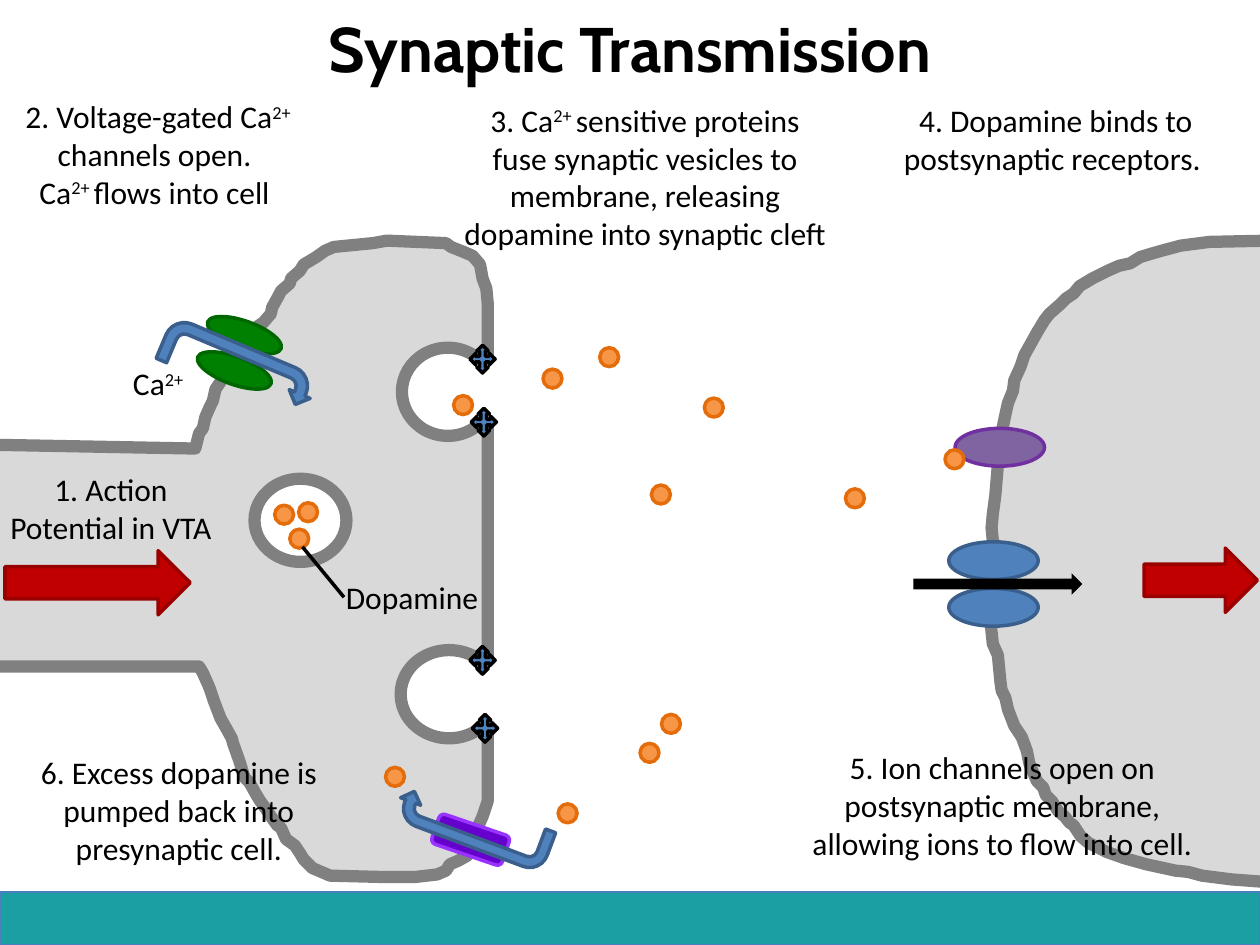
from pptx import Presentation
from pptx.dml.color import RGBColor
from pptx.enum.shapes import MSO_CONNECTOR, MSO_SHAPE as Shape
from pptx.enum.text import MSO_ANCHOR as Anchor, PP_ALIGN as Align
from pptx.oxml.xmlchemy import OxmlElement
from pptx.util import Inches, Pt

BLACK = RGBColor(0x00, 0x00, 0x00)
WHITE = RGBColor(0xFF, 0xFF, 0xFF)
TEAL = RGBColor(0x1C, 0x9F, 0xA3)
TEAL_EDGE = RGBColor(0x4B, 0x7E, 0xBC)
CELL = RGBColor(0xD9, 0xD9, 0xD9)
MEMBRANE = RGBColor(0x80, 0x80, 0x80)
GREEN = RGBColor(0x00, 0x80, 0x00)
GREEN_EDGE = RGBColor(0x00, 0x66, 0x00)
ORANGE = RGBColor(0xF7, 0x96, 0x46)
ORANGE_EDGE = RGBColor(0xE4, 0x6C, 0x0A)
RED = RGBColor(0xC0, 0x00, 0x00)
RED_EDGE = RGBColor(0x99, 0x00, 0x00)
BLUE = RGBColor(0x4F, 0x81, 0xBD)
BLUE_EDGE = RGBColor(0x3A, 0x5F, 0x8C)
VIOLET = RGBColor(0x66, 0x00, 0xCC)
VIOLET_EDGE = RGBColor(0x99, 0x33, 0xFF)
PURPLE = RGBColor(0x80, 0x64, 0xA2)
PURPLE_EDGE = RGBColor(0x70, 0x30, 0xA0)

MEMBRANE_WIDTH = 7
DOT_SIZE = 0.15

presentation = Presentation()
presentation.slide_width = Inches(10)
presentation.slide_height = Inches(7.5)
slide = presentation.slides.add_slide(presentation.slide_layouts[6])


def paint(shape, fill, edge=None, width=2, rotation=0):
    shape.shadow.inherit = False
    shape.rotation = rotation
    shape.fill.solid()
    shape.fill.fore_color.rgb = fill
    if edge is None:
        shape.line.fill.background()
    else:
        shape.line.color.rgb = edge
        shape.line.width = Pt(width)


def add_text(text, left, top, width, height, size=18, font="Calibri", bold=False,
             anchor=Anchor.TOP):
    """Add centred text; newlines start paragraphs, parts between ^ are superscript."""
    box = slide.shapes.add_textbox(Inches(left), Inches(top), Inches(width), Inches(height))
    frame = box.text_frame
    frame.word_wrap = True
    frame.vertical_anchor = anchor
    for number, line in enumerate(text.split("\n")):
        paragraph = frame.paragraphs[0] if number == 0 else frame.add_paragraph()
        paragraph.alignment = Align.CENTER
        for index, part in enumerate(line.split("^")):
            run = paragraph.add_run()
            run.text = part
            run.font.size = Pt(size)
            run.font.name = font
            run.font.bold = bold
            run.font.color.rgb = BLACK
            if index % 2:
                run.font._element.set("baseline", "30000")


# Cell outlines
presynaptic_cell = [
    (-0.07, 3.53), (1.55, 3.56), (1.58, 3.44), (1.61, 3.4), (1.63, 3.31), (1.67, 3.22),
    (1.69, 3.18), (1.71, 3.09), (1.77, 3), (1.85, 2.88), (1.9, 2.8), (1.94, 2.72),
    (2, 2.65), (2.03, 2.6), (2.09, 2.56), (2.15, 2.49), (2.16, 2.44), (2.21, 2.35),
    (2.23, 2.31), (2.3, 2.25), (2.31, 2.21), (2.38, 2.15), (2.41, 2.1), (2.51, 2.04),
    (2.58, 1.99), (2.65, 1.96), (2.96, 1.93), (3.07, 1.91), (3.54, 1.93), (3.58, 1.96),
    (3.68, 2), (3.75, 2.03), (3.81, 2.1), (3.83, 2.21), (3.86, 2.29), (3.87, 2.4),
    (3.87, 6.36), (3.83, 6.48), (3.79, 6.57), (3.77, 6.61), (3.73, 6.7), (3.71, 6.79),
    (3.64, 6.83), (3.57, 6.86), (3.54, 6.91), (3.47, 6.94), (3.3, 6.96), (3.02, 6.96),
    (2.62, 6.95), (2.55, 6.92), (2.48, 6.89), (2.41, 6.82), (2.38, 6.77), (2.34, 6.71),
    (2.27, 6.66), (2.23, 6.57), (2.2, 6.55), (2.15, 6.48), (2.11, 6.42), (2.06, 6.35),
    (2.03, 6.3), (1.98, 6.21), (1.94, 6.17), (1.9, 6.04), (1.85, 5.9), (1.84, 5.86),
    (1.79, 5.77), (1.75, 5.7), (1.7, 5.57), (1.67, 5.48), (1.65, 5.43), (1.61, 5.34),
    (1.58, 5.29), (-0.08, 5.29),
]
postsynaptic_cell = [
    (10.05, 7), (9.78, 6.98), (9.54, 6.95), (9.43, 6.92), (9.33, 6.91), (9.1, 6.86),
    (8.92, 6.81), (8.78, 6.76), (8.72, 6.73), (8.64, 6.69), (8.58, 6.64), (8.52, 6.55),
    (8.49, 6.53), (8.45, 6.48), (8.4, 6.44), (8.35, 6.36), (8.3, 6.31), (8.28, 6.25),
    (8.23, 6.2), (8.17, 6.06), (8.15, 5.96), (8.11, 5.85), (8.05, 5.76), (8, 5.63),
    (7.98, 5.54), (7.95, 5.48), (7.94, 5.41), (7.92, 5.2), (7.88, 5.11), (7.86, 4.92),
    (7.84, 4.6), (7.86, 4.41), (7.88, 4.29), (7.87, 4.19), (7.88, 4.08), (7.9, 3.93),
    (7.92, 3.69), (7.94, 3.48), (7.98, 3.29), (8, 3.2), (8.04, 3.1), (8.05, 3.02),
    (8.1, 2.91), (8.13, 2.82), (8.18, 2.73), (8.23, 2.64), (8.29, 2.54), (8.33, 2.49),
    (8.41, 2.42), (8.46, 2.37), (8.52, 2.33), (8.57, 2.27), (8.67, 2.21), (8.79, 2.15),
    (8.88, 2.11), (8.97, 2.09), (9.05, 2.04), (9.15, 2.01), (9.22, 1.99), (9.37, 1.95),
    (9.6, 1.92), (10.08, 1.91),
]
for outline in (presynaptic_cell, postsynaptic_cell):
    points = [(Inches(x), Inches(y)) for x, y in outline]
    builder = slide.shapes.build_freeform(*points[0])
    builder.add_line_segments(points[1:], close=True)
    paint(builder.convert_to_shape(), CELL, MEMBRANE, MEMBRANE_WIDTH)

# Preset shapes from back to front: kind, left, top, width, height, paint arguments
vesicle_paint = (WHITE, MEMBRANE, MEMBRANE_WIDTH)
blue_paint = (BLUE, BLUE_EDGE)
parts = [
    (Shape.RECTANGLE, 0, 7.08, 10, 0.42, (TEAL, TEAL_EDGE, 0.75)),
    # Calcium channel
    (Shape.OVAL, 1.83, 2.35, 0.22, 0.62, (GREEN, GREEN_EDGE, 2, 290)),
    (Shape.OVAL, 1.75, 2.63, 0.22, 0.62, (GREEN, GREEN_EDGE, 2, 290)),
    (Shape.U_TURN_ARROW, 1.26, 2.74, 1.25, 0.36, (*blue_paint, 2, 22.8)),
    # Action potentials
    (Shape.RIGHT_ARROW, 0.04, 4.37, 1.47, 0.51, (RED, RED_EDGE)),
    (Shape.RIGHT_ARROW, 9.08, 4.35, 0.9, 0.51, (RED, RED_EDGE)),
    # Ion channel and receptor
    (Shape.OVAL, 7.53, 4.67, 0.71, 0.3, blue_paint),
    (Shape.OVAL, 7.53, 4.3, 0.71, 0.3, blue_paint),
    (Shape.RIGHT_ARROW, 7.25, 4.55, 1.34, 0.17, (BLACK,)),
    (Shape.OVAL, 7.58, 3.4, 0.71, 0.3, (PURPLE, PURPLE_EDGE)),
    # Reuptake pump
    (Shape.ROUNDED_RECTANGLE, 3.44, 6.54, 0.59, 0.25, (VIOLET, VIOLET_EDGE, 2, 18.8)),
    (Shape.U_TURN_ARROW, 3.14, 6.38, 1.25, 0.34, (*blue_paint, 2, 200.5)),
    # Vesicles, two of them open to the cleft
    (Shape.OVAL, 2.02, 3.8, 0.73, 0.66, vesicle_paint),
    (Shape.OVAL, 3.19, 2.76, 0.73, 0.7, vesicle_paint),
    (Shape.OVAL, 3.18, 5.16, 0.77, 0.7, vesicle_paint),
    (Shape.RECTANGLE, 3.68, 2.85, 0.41, 0.49, (WHITE,)),
    (Shape.RECTANGLE, 3.71, 5.25, 0.41, 0.49, (WHITE,)),
]
fusion_proteins = [(3.73, 2.74), (3.74, 3.24), (3.73, 5.13), (3.75, 5.67)]
parts += [(Shape.QUAD_ARROW, x, y, 0.2, 0.22, (BLUE, BLACK)) for x, y in fusion_proteins]
dopamine_dots = [
    (2.18, 4.01), (2.37, 3.99), (2.3, 4.2), (3.06, 6.09), (4.43, 6.38), (6.71, 3.88),
    (5.08, 5.9), (3.6, 3.14), (4.76, 2.76), (5.25, 5.67), (5.59, 3.16), (5.17, 3.85),
    (4.31, 2.93), (7.5, 3.57),
]
parts += [(Shape.OVAL, x, y, DOT_SIZE, DOT_SIZE, (ORANGE, ORANGE_EDGE))
          for x, y in dopamine_dots]
for kind, left, top, width, height, look in parts:
    shape = slide.shapes.add_shape(kind, Inches(left), Inches(top), Inches(width), Inches(height))
    paint(shape, *look)

# Label line from the word to a dot
pointer = slide.shapes.add_connector(
    MSO_CONNECTOR.STRAIGHT, Inches(2.73), Inches(4.74), Inches(2.4), Inches(4.34))
pointer.line.color.rgb = BLACK
pointer.line.width = Pt(2)
pointer._element.spPr.append(OxmlElement("a:effectLst"))

# Title, steps and labels
add_text("Synaptic Transmission", 0, -0.25, 10, 1.25, size=36, font="Cabin", bold=True,
         anchor=Anchor.MIDDLE)
captions = [
    ("1. Action Potential in VTA", -0.08, 3.68, 1.92, 0.71),
    ("2. Voltage-gated Ca^2+ ^channels open. \nCa^2+ ^flows into cell ", 0, 0.72, 2.51, 1.01),
    ("3. Ca^2+ ^sensitive proteins fuse synaptic vesicles to membrane, "
     "releasing dopamine into synaptic cleft", 3.58, 0.75, 3.08, 1.31),
    ("4. Dopamine binds to postsynaptic receptors. ", 6.67, 0.75, 3.42, 0.71),
    ("5. Ion channels open on postsynaptic membrane, "
     "allowing ions to flow into cell. ", 6.33, 5.89, 3.25, 1.01),
    ("6. Excess dopamine is pumped back into presynaptic cell.", -0.08, 5.93, 3, 1.01),
    ("Ca^2+", 0.92, 2.84, 0.67, 0.4),
    ("Dopamine", 2.5, 4.54, 1.54, 0.4),
]
for caption in captions:
    add_text(*caption)

presentation.save("out.pptx")
